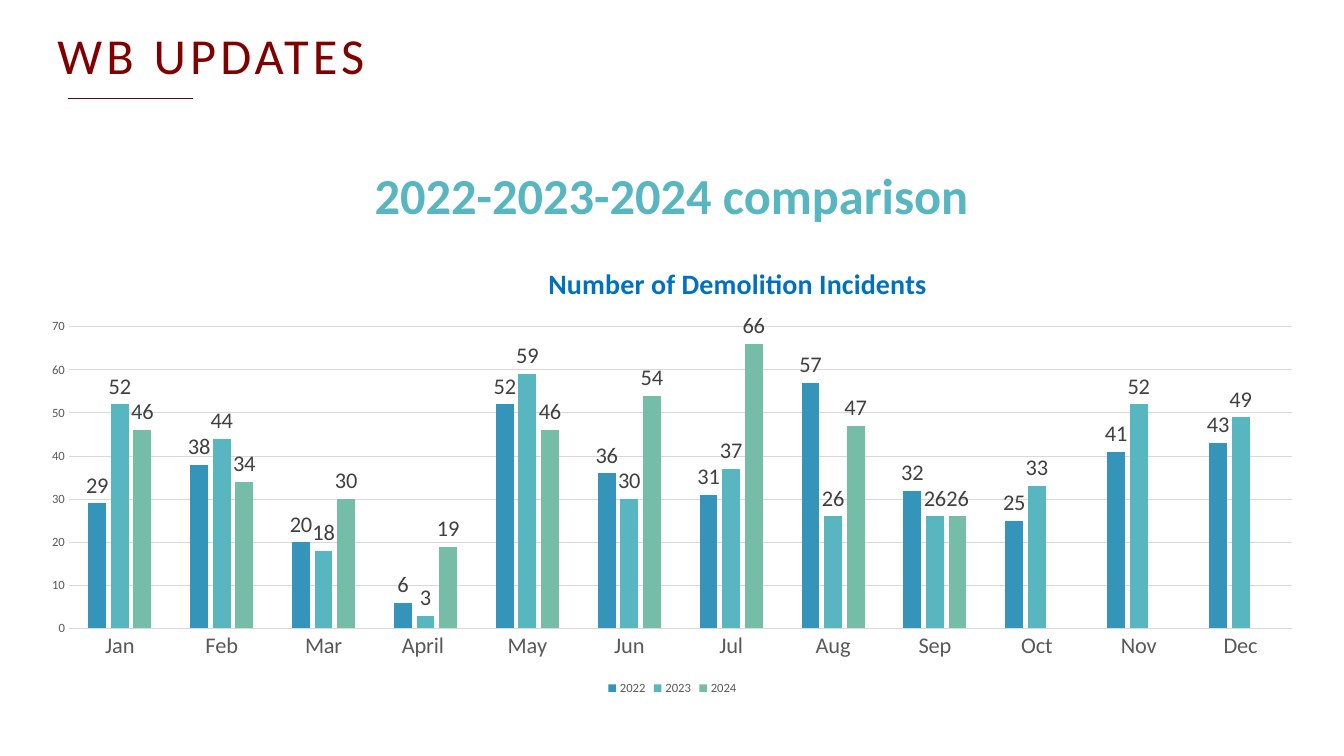
"""Build the WB Updates slide comparing monthly demolition incidents."""
from dataclasses import dataclass

from lxml import etree
from pptx import Presentation
from pptx import util as u
from pptx.chart.data import CategoryChartData
from pptx.dml.color import RGBColor
from pptx.enum import chart as charts, shapes, text
from pptx.oxml import ns

HEADING = "WB UPDATES"
SUBTITLE = "2022-2023-2024 comparison "
CHART_TITLE = "Number of Demolition Incidents"
MONTHS = ["Jan", "Feb", "Mar", "April ", "May", "Jun",
          "Jul", "Aug", "Sep", "Oct", "Nov", "Dec"]
INCIDENTS = {
    "2022": [29, 38, 20, 6, 52, 36, 31, 57, 32, 25, 41, 43],
    "2023": [52, 44, 18, 3, 59, 30, 37, 26, 26, 33, 52, 49],
    "2024": [46, 34, 30, 19, 46, 54, 66, 47, 26, None, None, None],
}
BOXES = {
    "heading": (0.47, 0.26, 11.5, 0.72),
    "subtitle": (1.02, 1.25, 11.4, 1.04),
    "chart": (0.26, 2.43, 12.82, 4.51),
    "rule": (0.67, 0.98, 1.91, 0.98),
}
TITLE_LAYOUT = {"xMode": "edge", "yMode": "edge", "x": 0.4, "y": 0.03}
PLOT_LAYOUT = {"layoutTarget": "inner", "xMode": "edge", "yMode": "edge",
               "x": 0.033, "y": 0.18, "w": 0.946, "h": 0.664}


@dataclass(frozen=True)
class Theme:
    """Colours and type sizes of the slide."""
    face: str = "Calibri"
    heading: str = "800000"
    rule: str = "640811"
    subtitle: str = "58B6C0"
    chart_title: str = "0070C0"
    axis: str = "595959"
    label: str = "404040"
    grid: str = "D9D9D9"
    series: tuple = ("3494BA", "58B6C0", "75BDA7")
    large: int = 36
    medium: int = 20
    normal: int = 16
    small: int = 9


THEME = Theme()


def assign(target, values):
    """Set every named attribute on the target."""
    for name, value in values.items():
        setattr(target, name, value)


def place(name):
    """Return the lengths of a named box."""
    return [u.Inches(length) for length in BOXES[name]]


def style_font(font, size, color, bold=False):
    """Apply the theme typeface with a size and colour."""
    assign(font, {"name": THEME.face, "size": u.Pt(size), "bold": bold})
    font.color.rgb = RGBColor.from_string(color)


def style_line(line, color, width=0.75):
    """Colour a line and set its width."""
    line.color.rgb = RGBColor.from_string(color)
    line.width = u.Pt(width)


def write(box, words, color, anchor, align, bold=False):
    """Fill a text box with one large line and return its run."""
    assign(box.text_frame, {"word_wrap": True, "vertical_anchor": anchor,
                            "auto_size": text.MSO_AUTO_SIZE.NONE})
    para = box.text_frame.paragraphs[0]
    assign(para, {"alignment": align, "line_spacing": 0.9,
                  "space_before": u.Pt(0)})
    span = para.add_run()
    span.text = words
    style_font(span.font, THEME.large, color, bold)
    return span


def set_layout(parent, index, values):
    """Give a chart part a manual layout."""
    for old in parent.findall(ns.qn("c:layout")):
        parent.remove(old)
    layout = etree.Element(ns.qn("c:layout"))
    manual = etree.SubElement(layout, ns.qn("c:manualLayout"))
    for name, value in values.items():
        etree.SubElement(manual, ns.qn(f"c:{name}"), val=str(value))
    parent.insert(index, layout)


def add_heading(page):
    """Format the title and draw its short rule."""
    title = page.shapes.title
    assign(title, dict(zip(("left", "top", "width", "height"), place("heading"))))
    span = write(title, HEADING, THEME.heading,
                 text.MSO_ANCHOR.TOP, text.PP_ALIGN.LEFT)
    span.font._element.set("spc", "300")
    rule = page.shapes.add_connector(shapes.MSO_CONNECTOR.STRAIGHT, *place("rule"))
    style_line(rule.line, THEME.rule, 1)
    etree.SubElement(rule._element.spPr, ns.qn("a:effectLst"))


def add_subtitle(page):
    """Add the line above the chart."""
    box = page.shapes.add_textbox(*place("subtitle"))
    write(box, SUBTITLE, THEME.subtitle, text.MSO_ANCHOR.BOTTOM,
          text.PP_ALIGN.CENTER, True)
    box.text_frame.paragraphs[0].space_after = u.Pt(6)


def add_incident_chart(page):
    """Add the clustered columns with their axes, labels and legend."""
    data = CategoryChartData()
    data.categories = MONTHS
    for year, counts in INCIDENTS.items():
        data.add_series(year, counts)
    chart = page.shapes.add_chart(charts.XL_CHART_TYPE.COLUMN_CLUSTERED,
                                  *place("chart"), data).chart
    style_font(chart.font, 10, "000000")

    chart.has_title = True
    para = chart.chart_title.text_frame.paragraphs[0]
    span = para.add_run()
    span.text = CHART_TITLE
    style_font(span.font, THEME.medium, THEME.chart_title, True)

    chart.has_legend = True
    assign(chart.legend, {"position": charts.XL_LEGEND_POSITION.BOTTOM,
                          "include_in_layout": False})
    style_font(chart.legend.font, THEME.small, THEME.axis)

    months, counts = chart.category_axis, chart.value_axis
    for axis, size in ((months, THEME.normal), (counts, THEME.small)):
        assign(axis, {"major_tick_mark": charts.XL_TICK_MARK.NONE,
                      "minor_tick_mark": charts.XL_TICK_MARK.NONE})
        style_font(axis.tick_labels.font, size, THEME.axis)
    style_line(months.format.line, THEME.grid)
    assign(counts, {"minimum_scale": 0, "maximum_scale": 70, "major_unit": 10,
                    "has_major_gridlines": True})
    counts.format.line.fill.background()
    style_line(counts.major_gridlines.format.line, THEME.grid)

    plot = chart.plots[0]
    assign(plot, {"gap_width": 219, "overlap": -27, "vary_by_categories": False})
    for series, color in zip(plot.series, THEME.series):
        series.format.fill.solid()
        series.format.fill.fore_color.rgb = RGBColor.from_string(color)
        labels = series.data_labels
        assign(labels, {"show_value": True,
                        "position": charts.XL_LABEL_POSITION.OUTSIDE_END})
        style_font(labels.font, THEME.normal, THEME.label)

    root = chart.element
    set_layout(root.xpath("c:chart/c:title")[0], 1, TITLE_LAYOUT)
    set_layout(root.xpath("c:chart/c:plotArea")[0], 0, PLOT_LAYOUT)


def main():
    """Assemble and save the deck."""
    deck = Presentation()
    assign(deck, {"slide_width": u.Inches(13.33), "slide_height": u.Inches(7.5)})
    page = deck.slides.add_slide(deck.slide_layouts.get_by_name("Title Only"))
    add_subtitle(page)
    add_incident_chart(page)
    add_heading(page)
    deck.save("out.pptx")


if __name__ == "__main__":
    main()
